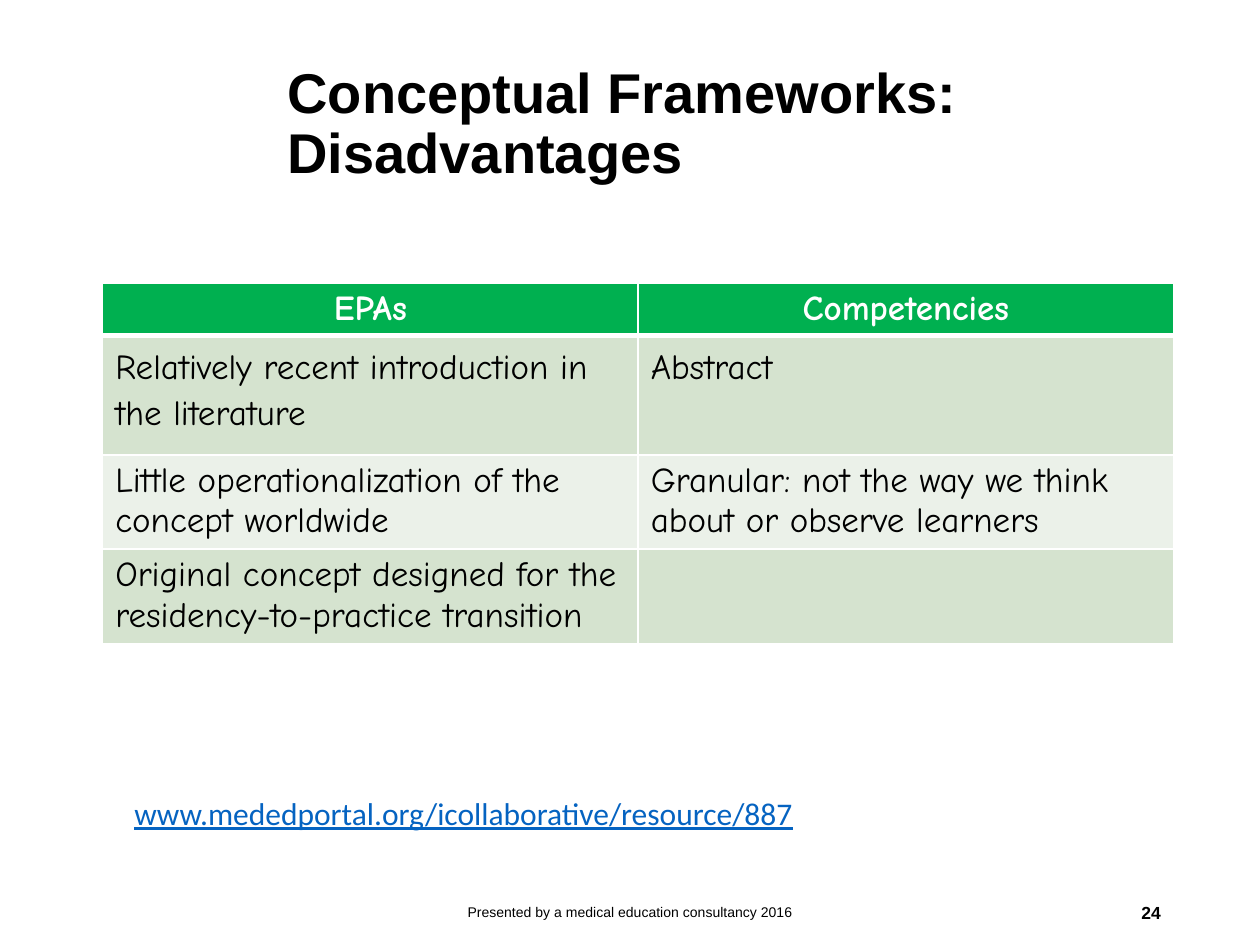
from dataclasses import dataclass

from lxml.etree import SubElement
from pptx import Presentation
from pptx.dml.color import RGBColor as RGB
from pptx.enum.text import MSO_ANCHOR as Anchor, MSO_AUTO_SIZE as AutoSize, PP_ALIGN as Align
from pptx.oxml.ns import qn
from pptx.util import Cm, Pt


@dataclass(frozen=True)
class Theme:
    white: str = "FFFFFF"
    black: str = "000000"
    header: str = "00B050"
    band_dark: str = "D5E3CF"
    band_light: str = "EBF1E9"
    link: str = "0563C1"
    sans: str = "Arial"
    body: str = "Calibri"
    hand: str = "Comic Neue"
    title_size: float = 32
    table_size: float = 20
    link_size: float = 18
    footer_size: float = 8
    number_size: float = 10
    thin: float = 1
    thick: float = 3


@dataclass(frozen=True)
class Box:
    left: float
    top: float
    width: float
    height: float

    def lengths(self) -> tuple:
        return Cm(self.left), Cm(self.top), Cm(self.width), Cm(self.height)


@dataclass(frozen=True)
class Row:
    cells: tuple[str, str]
    height: float
    fill: str
    spacing: float = 1.0
    after: float = 0


T = Theme()

ROWS = (
    Row(("EPAs", "Competencies"), 1.04, T.header),
    Row(("Relatively recent introduction in the literature", "Abstract"),
        2.4, T.band_dark, 1.15, 10),
    Row(("Little operationalization of the concept worldwide",
         "Granular: not the way we think about or observe learners"), 1.9, T.band_light),
    Row(("Original concept designed for the residency-to-practice transition", ""),
        1.9, T.band_dark),
)


def write(tf, text: str, *, size: float, font: str, color: str = T.black,
          bold: bool = False, underline: bool = False, align=Align.LEFT,
          spacing: float = 1.0, after: float = 0) -> None:
    p = tf.paragraphs[0]
    p.alignment = align
    p.line_spacing = spacing
    p.space_before = Pt(0)
    p.space_after = Pt(after)
    p.font.size = Pt(size)
    if not text:
        return
    r = p.add_run()
    r.text = text
    r.font.name = font
    r.font.size = Pt(size)
    r.font.bold = bold
    r.font.underline = underline
    r.font.color.rgb = RGB.from_string(color)


def add_text(s, box: Box, text: str, *, anchor=Anchor.MIDDLE, wrap: bool = True, **fmt) -> None:
    tf = s.shapes.add_textbox(*box.lengths()).text_frame
    tf.word_wrap = wrap
    tf.vertical_anchor = anchor
    write(tf, text, **fmt)


def set_borders(cell, top: float, bottom: float) -> None:
    tc_pr = cell._tc.get_or_add_tcPr()
    for tag, width in (("lnL", T.thin), ("lnR", T.thin), ("lnT", top), ("lnB", bottom)):
        ln = SubElement(tc_pr, qn(f"a:{tag}"), w=str(Pt(width)))
        fill = SubElement(ln, qn("a:solidFill"))
        SubElement(fill, qn("a:srgbClr"), val=T.white)


def add_comparison(s, box: Box, rows: tuple[Row, ...]) -> None:
    table = s.shapes.add_table(len(rows), 2, *box.lengths()).table
    for i, row in enumerate(rows):
        table.rows[i].height = Cm(row.height)
        head = i == 0
        for cell, text in zip(table.rows[i].cells, row.cells):
            set_borders(cell, T.thick if i == 1 else T.thin, T.thick if head else T.thin)
            cell.fill.solid()
            cell.fill.fore_color.rgb = RGB.from_string(row.fill)
            write(cell.text_frame, text, size=T.table_size, font=T.hand, bold=head,
                  color=T.white if head else T.black,
                  align=Align.CENTER if head else Align.LEFT,
                  spacing=row.spacing, after=row.after)


def add_title(s, box: Box, text: str) -> None:
    sp = s.shapes.title
    sp.left, sp.top, sp.width, sp.height = box.lengths()
    tf = sp.text_frame
    tf.word_wrap = True
    tf.auto_size = AutoSize.NONE
    tf.vertical_anchor = Anchor.MIDDLE
    write(tf, text, size=T.title_size, font=T.sans, bold=True, spacing=0.9)


def main() -> None:
    prs = Presentation()
    prs.slide_width, prs.slide_height = Cm(25.4), Cm(19.05)
    s = prs.slides.add_slide(prs.slide_layouts[5])
    add_comparison(s, Box(2.07, 5.7, 21.59, 7.24), ROWS)
    add_title(s, Box(5.54, 0.69, 18.14, 3.68), "Conceptual Frameworks: Disadvantages")
    add_text(s, Box(2.46, 15.88, 14.27, 1.8), "www.mededportal.org/icollaborative/resource/887",
             anchor=Anchor.TOP, wrap=False, size=T.link_size, font=T.body,
             color=T.link, underline=True)
    add_text(s, Box(8.41, 17.88, 8.59, 1.02),
             "Presented by a medical education consultancy 2016",
             size=T.footer_size, font=T.sans, align=Align.CENTER)
    add_text(s, Box(17.93, 17.88, 5.72, 1.02), "24", size=T.number_size, font=T.sans,
             bold=True, align=Align.RIGHT)
    prs.save("out.pptx")


if __name__ == "__main__":
    main()
